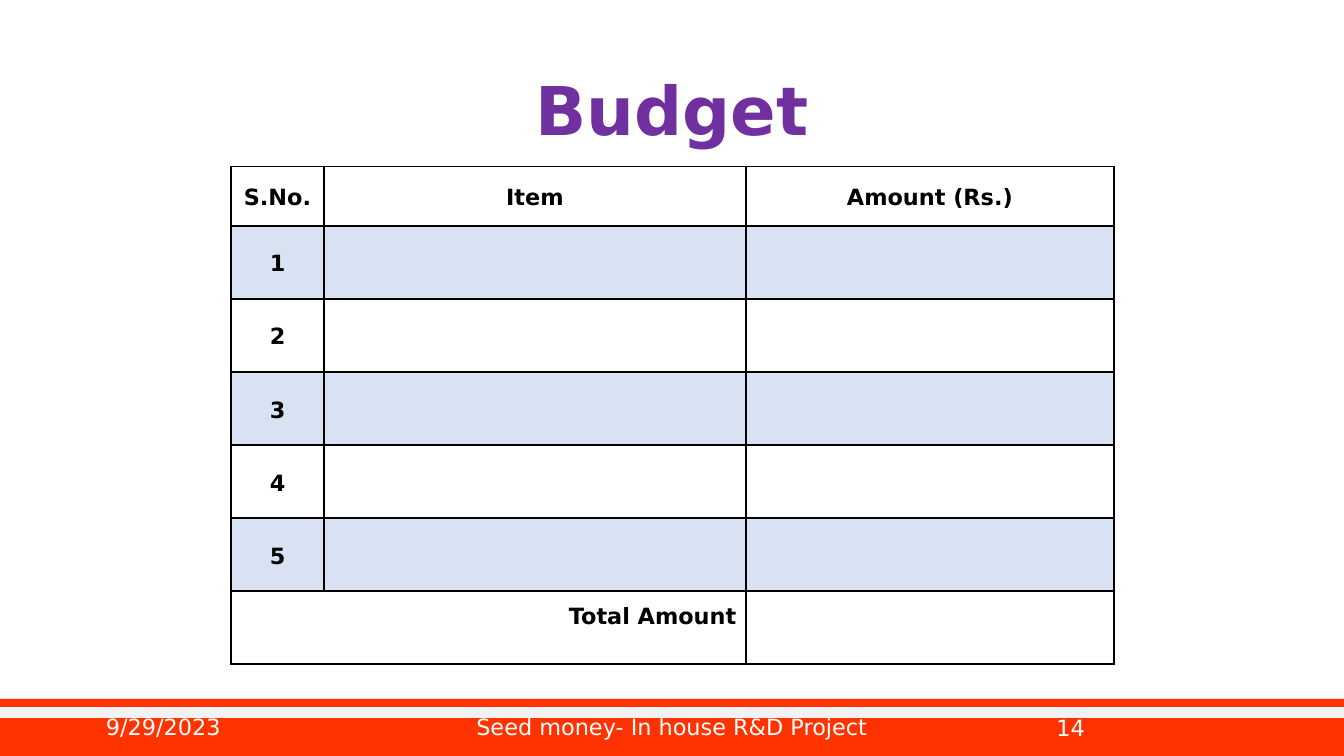
"""Build a budget slide with an item table and a footer band."""
from lxml import etree
from pptx import Presentation
from pptx.dml.color import RGBColor
from pptx.enum.shapes import MSO_CONNECTOR, MSO_SHAPE
from pptx.enum.text import MSO_ANCHOR, MSO_AUTO_SIZE, PP_ALIGN
from pptx.oxml.ns import qn
from pptx.util import Inches, Pt

LEFT, CENTER, RIGHT = PP_ALIGN.LEFT, PP_ALIGN.CENTER, PP_ALIGN.RIGHT
TOP, MIDDLE = MSO_ANCHOR.TOP, MSO_ANCHOR.MIDDLE
RECTANGLE, STRAIGHT = MSO_SHAPE.RECTANGLE, MSO_CONNECTOR.STRAIGHT
NO_AUTOFIT = MSO_AUTO_SIZE.NONE
FONT = "DejaVu Sans"
COLORS = {
    "title": "7030A0",
    "footer": "FF3300",
    "stripe": "F2F2F2",
    "band": "4472C4",
    "text": "000000",
    "white": "FFFFFF",
}


def write_text(frame, text, size=12, color="text", bold=False, align=CENTER,
               line_spacing=None, space_after=None):
    """Put one formatted paragraph into a text frame."""
    para = frame.paragraphs[0]
    para.alignment = align
    if line_spacing:
        para.line_spacing = line_spacing
    if space_after:
        para.space_after = Pt(space_after)
    span = para.add_run()
    span.text = text
    span.font.name = FONT
    span.font.size = Pt(size)
    span.font.bold = bold
    span.font.color.rgb = RGBColor.from_string(COLORS[color])


class SlideBuilder:
    """Hold the current slide and draw styled elements on it."""

    def __init__(self, page):
        self.page = page

    def title(self, text, left, top, width, height):
        """Place the title placeholder."""
        box = self.page.shapes.title
        box.left, box.top = Inches(left), Inches(top)
        box.width, box.height = Inches(width), Inches(height)
        frame = box.text_frame
        frame.auto_size = NO_AUTOFIT
        frame.word_wrap = True
        frame.vertical_anchor = MIDDLE
        write_text(frame, text, size=36, color="title", bold=True, line_spacing=0.9)

    def bar(self, left, top, width, height, color):
        """Draw a plain filled rectangle."""
        bar = self.page.shapes.add_shape(
            RECTANGLE, Inches(left), Inches(top), Inches(width), Inches(height))
        bar.shadow.inherit = False
        bar.fill.solid()
        bar.fill.fore_color.rgb = RGBColor.from_string(COLORS[color])
        bar.line.fill.background()

    def rule(self, left, right, top, color, weight):
        """Draw a horizontal line."""
        rule = self.page.shapes.add_connector(
            STRAIGHT, Inches(left), Inches(top), Inches(right), Inches(top))
        rule.line.color.rgb = RGBColor.from_string(COLORS[color])
        rule.line.width = Pt(weight)
        etree.SubElement(rule._element.spPr, qn("a:effectLst"))

    def footer_text(self, text, left, width, height, align):
        """Write one item of the footer."""
        box = self.page.shapes.add_textbox(
            Inches(left), Inches(5.3), Inches(width), Inches(height))
        box.text_frame.word_wrap = True
        box.text_frame.vertical_anchor = MIDDLE
        write_text(box.text_frame, text, color="white", align=align)

    def cell(self, cell, banded):
        """Give a table cell its borders, margins and fill."""
        properties = cell._tc.get_or_add_tcPr()
        for side in ("a:lnL", "a:lnR", "a:lnT", "a:lnB"):
            border = etree.SubElement(properties, qn(side), w=str(Pt(1)))
            fill = etree.SubElement(border, qn("a:solidFill"))
            etree.SubElement(fill, qn("a:srgbClr"), val=COLORS["text"])
        cell.margin_left = cell.margin_right = Inches(0.07)
        cell.margin_top = cell.margin_bottom = 0
        cell.vertical_anchor = MIDDLE
        if banded:
            cell.fill.solid()
            cell.fill.fore_color.rgb = RGBColor.from_string(COLORS["band"])
            color = properties.find(qn("a:solidFill")).find(qn("a:srgbClr"))
            etree.SubElement(color, qn("a:alpha"), val="20000")
        else:
            cell.fill.background()

    def budget_table(self, left, top, widths, heights, headers):
        """Draw the numbered budget table with its total row."""
        table = self.page.shapes.add_table(
            len(heights), len(widths), Inches(left), Inches(top),
            Inches(sum(widths)), Inches(sum(heights))).table
        table.first_row = table.horz_banding = False
        for column, width in zip(table.columns, widths):
            column.width = Inches(width)
        last = len(heights) - 1
        for index, height in enumerate(heights):
            table.rows[index].height = Inches(height)
            for column in range(len(widths)):
                self.cell(table.cell(index, column), banded=index % 2 == 1)
            if index < last:
                labels = [str(index)] if index else headers
                for column, label in enumerate(labels):
                    write_text(table.cell(index, column).text_frame, label,
                               bold=True, line_spacing=1.15, space_after=10)
        total = table.cell(last, 0)
        total.merge(table.cell(last, 1))
        total.vertical_anchor = TOP
        write_text(total.text_frame, "Total Amount", bold=True, align=RIGHT,
                   line_spacing=1.5, space_after=10)


def main():
    """Assemble and save the deck."""
    deck = Presentation()
    deck.slide_width = Inches(10)
    deck.slide_height = deck.slide_width * 9 // 16
    slide = SlideBuilder(deck.slides.add_slide(deck.slide_layouts[5]))
    slide.bar(-0.02, 5.2, 10.02, 0.43, "footer")
    slide.rule(-0.02, 10, 5.3, "stripe", 6)
    slide.title("Budget", 0.69, 0.3, 8.62, 1.09)
    slide.footer_text("9/29/2023", 0.69, 2.25, 0.21, LEFT)
    slide.footer_text("Seed money- In house R&D Project", 3.31, 3.38, 0.21, CENTER)
    slide.footer_text("14", 7.06, 1.11, 0.22, RIGHT)
    header_height, table_height, items = 0.44, 3.7, 6
    row_height = (table_height - header_height) / items
    slide.budget_table(1.72, 1.24, [0.69, 3.14, 2.74],
                       [header_height] + [row_height] * items,
                       ["S.No.", "Item", "Amount (Rs.)"])
    deck.save("out.pptx")


if __name__ == "__main__":
    main()
